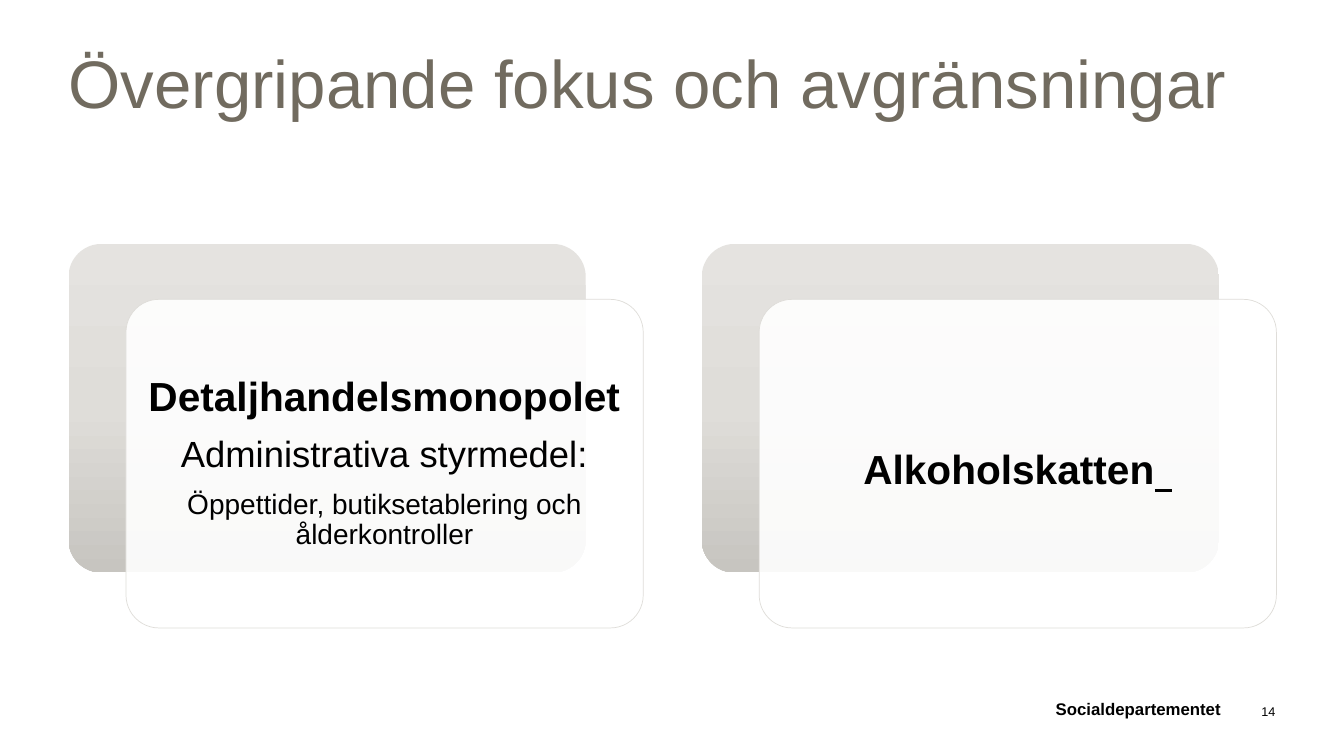
from lxml import etree
from pptx import Presentation
from pptx.dml.color import RGBColor
from pptx.enum import shapes, text
from pptx.oxml import ns
from pptx.util import Inches, Pt

FONT = "Arial"
BLACK = RGBColor(0x00, 0x00, 0x00)
WHITE = RGBColor(0xFF, 0xFF, 0xFF)
TITLE_COLOR = RGBColor(0x71, 0x6B, 0x5F)
BORDER = RGBColor(0xDF, 0xDD, 0xD9)
GRADIENT = [
    (0, RGBColor(0xE5, 0xE3, 0xE0)),
    (50, RGBColor(0xDF, 0xDD, 0xD9)),
    (100, RGBColor(0xC7, 0xC5, 0xC0)),
]

TITLE = "Övergripande fokus och avgränsningar"
CARDS = [
    [
        [("Detaljhandelsmonopolet", 29, True, False)],
        [("Administrativa styrmedel:", 26, False, False)],
        [("Öppettider, butiksetablering och ålderkontroller", 20, False, False)],
    ],
    [[("Alkoholskatten", 29, True, False), (" ", 45, False, True)]],
]
FOOTERS = [
    ("Socialdepartementet", 3.29, 8.82, 12, True),
    ("14", 12.12, 0.53, 9, False),
]

CARD_LEFT, CARD_TOP = 0.68, 2.42
CARD_WIDTH, CARD_HEIGHT = 5.13, 3.26
CARD_STEP = 6.28
FRONT_SHIFT_X, FRONT_SHIFT_Y = 0.57, 0.55


def add_run(paragraph, content, size, color=BLACK, bold=False, underline=False):
    run = paragraph.add_run()
    run.text = content
    font = run.font
    font.name, font.size, font.bold = FONT, Pt(size), bold
    font.color.rgb = color
    if underline:
        font.underline = True


def set_frame(frame, anchor, side, vertical):
    frame.word_wrap = True
    frame.auto_size = text.MSO_AUTO_SIZE.NONE
    frame.vertical_anchor = anchor
    frame.margin_left = frame.margin_right = Inches(side)
    frame.margin_top = frame.margin_bottom = Inches(vertical)


def add_panel(slide, left, top):
    shape = slide.shapes.add_shape(
        shapes.MSO_SHAPE.ROUNDED_RECTANGLE,
        Inches(left), Inches(top), Inches(CARD_WIDTH), Inches(CARD_HEIGHT))
    shape.adjustments[0] = 0.1
    shape.shadow.inherit = False
    return shape


def fill_gradient(shape):
    shape.line.fill.background()
    shape.fill.gradient()
    shape.fill.gradient_angle = 270
    stops = shape.fill._fill._gradFill.find(ns.qn("a:gsLst"))
    for stop in list(stops):
        stops.remove(stop)
    for position, color in GRADIENT:
        stop = etree.SubElement(stops, ns.qn("a:gs"), pos=str(position * 1000))
        etree.SubElement(stop, ns.qn("a:srgbClr"), val=str(color))


def fill_translucent(shape):
    shape.fill.solid()
    shape.fill.fore_color.rgb = WHITE
    color = shape._element.spPr.find(ns.qn("a:solidFill")).find(ns.qn("a:srgbClr"))
    etree.SubElement(color, ns.qn("a:alpha"), val="90000")
    shape.line.color.rgb = BORDER
    shape.line.width = Pt(0.5)


def add_card(slide, left, paragraphs):
    fill_gradient(add_panel(slide, left, CARD_TOP))
    front = add_panel(slide, left + FRONT_SHIFT_X, CARD_TOP + FRONT_SHIFT_Y)
    fill_translucent(front)
    frame = front.text_frame
    set_frame(frame, text.MSO_ANCHOR.MIDDLE, 0.12, 0.12)
    for index, runs in enumerate(paragraphs):
        paragraph = frame.add_paragraph() if index else frame.paragraphs[0]
        paragraph.alignment = text.PP_ALIGN.CENTER
        paragraph.line_spacing = 0.9
        paragraph.space_after = Pt(11)
        for content, size, bold, underline in runs:
            add_run(paragraph, content, size, bold=bold, underline=underline)


def main():
    presentation = Presentation()
    presentation.slide_width = Inches(13.33)
    presentation.slide_height = Inches(7.5)
    slide = presentation.slides.add_slide(presentation.slide_layouts[5])

    title = slide.shapes.title
    title.left, title.top = Inches(0.68), Inches(0.31)
    title.width, title.height = Inches(11.97), Inches(1.13)
    set_frame(title.text_frame, text.MSO_ANCHOR.MIDDLE, 0, 0.05)
    heading = title.text_frame.paragraphs[0]
    heading.alignment = text.PP_ALIGN.LEFT
    heading.line_spacing = 0.85
    add_run(heading, TITLE, 48, TITLE_COLOR)

    for content, left, width, size, bold in FOOTERS:
        box = slide.shapes.add_textbox(
            Inches(left), Inches(6.89), Inches(width), Inches(0.24))
        set_frame(box.text_frame, text.MSO_ANCHOR.BOTTOM, 0, 0)
        paragraph = box.text_frame.paragraphs[0]
        paragraph.alignment = text.PP_ALIGN.RIGHT
        add_run(paragraph, content, size, bold=bold)

    for index, paragraphs in enumerate(CARDS):
        add_card(slide, CARD_LEFT + index * CARD_STEP, paragraphs)

    presentation.save("out.pptx")


if __name__ == "__main__":
    main()
